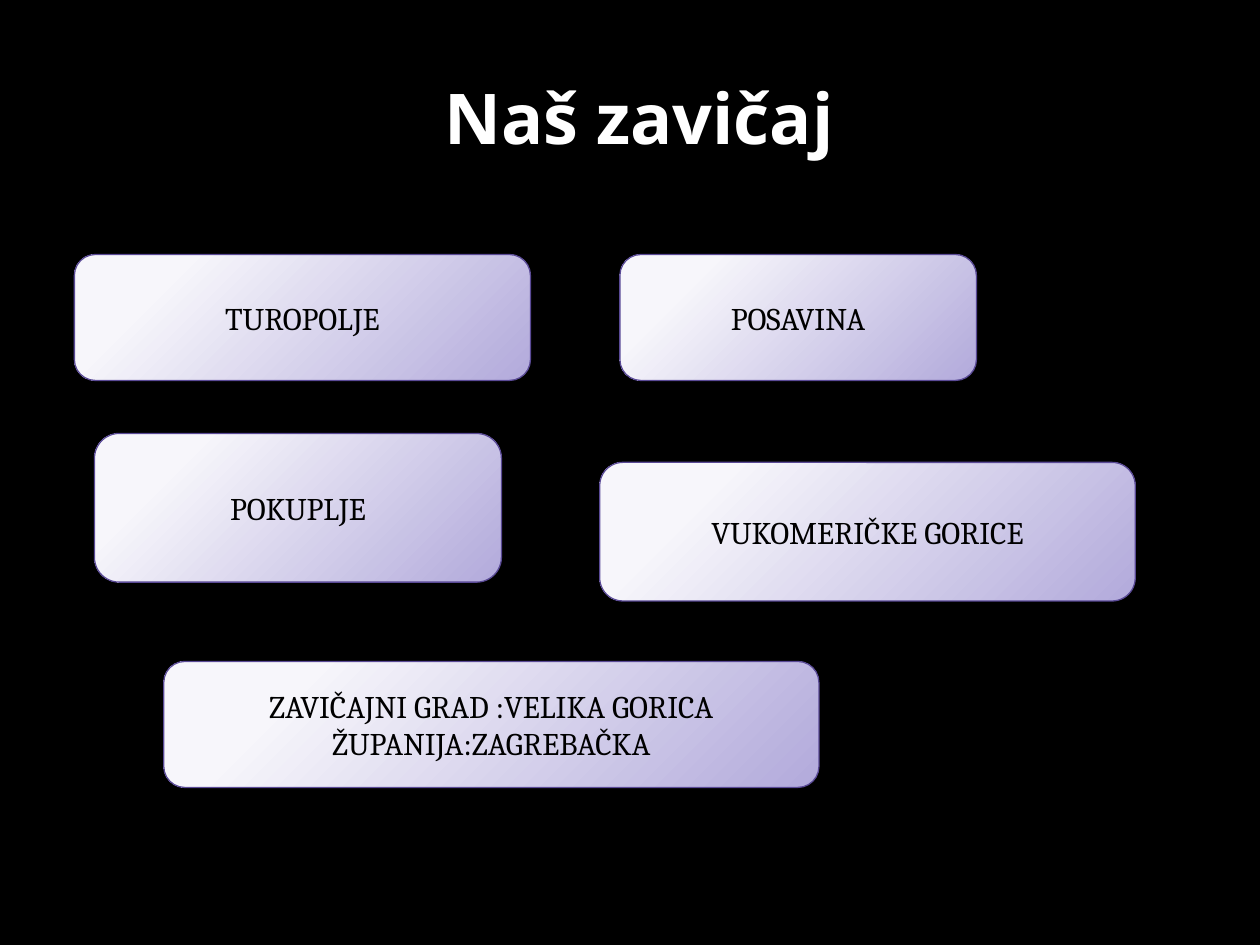
import pptx
import pptx.dml.color
import pptx.enum.shapes
import pptx.enum.text
import pptx.oxml
import pptx.oxml.ns
import pptx.util

Inches = pptx.util.Inches
Pt = pptx.util.Pt
RGB = pptx.dml.color.RGBColor.from_string
qn = pptx.oxml.ns.qn

TITLE = " Naš zavičaj"
# text, left, top, width, height
REGIONS = [
    ("POKUPLJE", 0.75, 3.44, 3.23, 1.18),
    ("POSAVINA", 4.92, 2.02, 2.83, 1),
    ("TUROPOLJE", 0.59, 2.02, 3.62, 1),
    ("VUKOMERIČKE GORICE", 4.76, 3.67, 4.25, 1.1),
    ("ZAVIČAJNI GRAD :VELIKA GORICA ŽUPANIJA:ZAGREBAČKA", 1.3, 5.25, 5.2, 1),
]
THEME = {
    "background": "000000",
    "title": {"font": "Open Sans", "size": 40, "color": "FFFFFF", "bold": True},
    "label": {"font": "Cambria", "size": 18, "color": "000000", "bold": False},
    "gradient": [(0.2, "F7F6FB"), (1, "B2AADB")],
    "line": "5A4A96",
    "line_width": 0.75,
}


def place(s, left, top, width, height):
    s.left, s.top = Inches(left), Inches(top)
    s.width, s.height = Inches(width), Inches(height)


def write(s, text, style):
    tf = s.text_frame
    tf.word_wrap = True
    tf.vertical_anchor = pptx.enum.text.MSO_ANCHOR.MIDDLE
    p = tf.paragraphs[0]
    p.alignment = pptx.enum.text.PP_ALIGN.CENTER
    r = p.add_run()
    r.text = text
    r.font.name = style["font"]
    r.font.size = Pt(style["size"])
    r.font.bold = style["bold"]
    r.font.color.rgb = RGB(style["color"])


def fill_radial(s):
    """Fill with a circular gradient centred just outside the top left corner."""
    s.fill.gradient()
    for stop, (position, color) in zip(s.fill.gradient_stops, THEME["gradient"]):
        stop.position = position
        stop.color.rgb = RGB(color)
    lin = s.fill._xPr.find(qn("a:gradFill")).find(qn("a:lin"))
    circle = pptx.oxml.parse_xml(
        f'<a:path {pptx.oxml.ns.nsdecls("a")} path="circle">'
        '<a:fillToRect l="-15000" t="-15000" r="115000" b="115000"/></a:path>'
    )
    lin.getparent().replace(lin, circle)


def add_region(slide, text, *box):
    s = slide.shapes.add_shape(
        pptx.enum.shapes.MSO_SHAPE.ROUNDED_RECTANGLE, *map(Inches, box)
    )
    s.shadow.inherit = False
    fill_radial(s)
    s.line.color.rgb = RGB(THEME["line"])
    s.line.width = Pt(THEME["line_width"])
    write(s, text, THEME["label"])


def main():
    prs = pptx.Presentation()
    prs.slide_width, prs.slide_height = Inches(10), Inches(7.5)
    slide = prs.slides.add_slide(prs.slide_layouts[5])
    slide.background.fill.solid()
    slide.background.fill.fore_color.rgb = RGB(THEME["background"])

    place(slide.shapes.title, 0.5, 0.3, 9, 1.25)
    write(slide.shapes.title, TITLE, THEME["title"])
    for region in REGIONS:
        add_region(slide, *region)
    prs.save("out.pptx")


if __name__ == "__main__":
    main()
